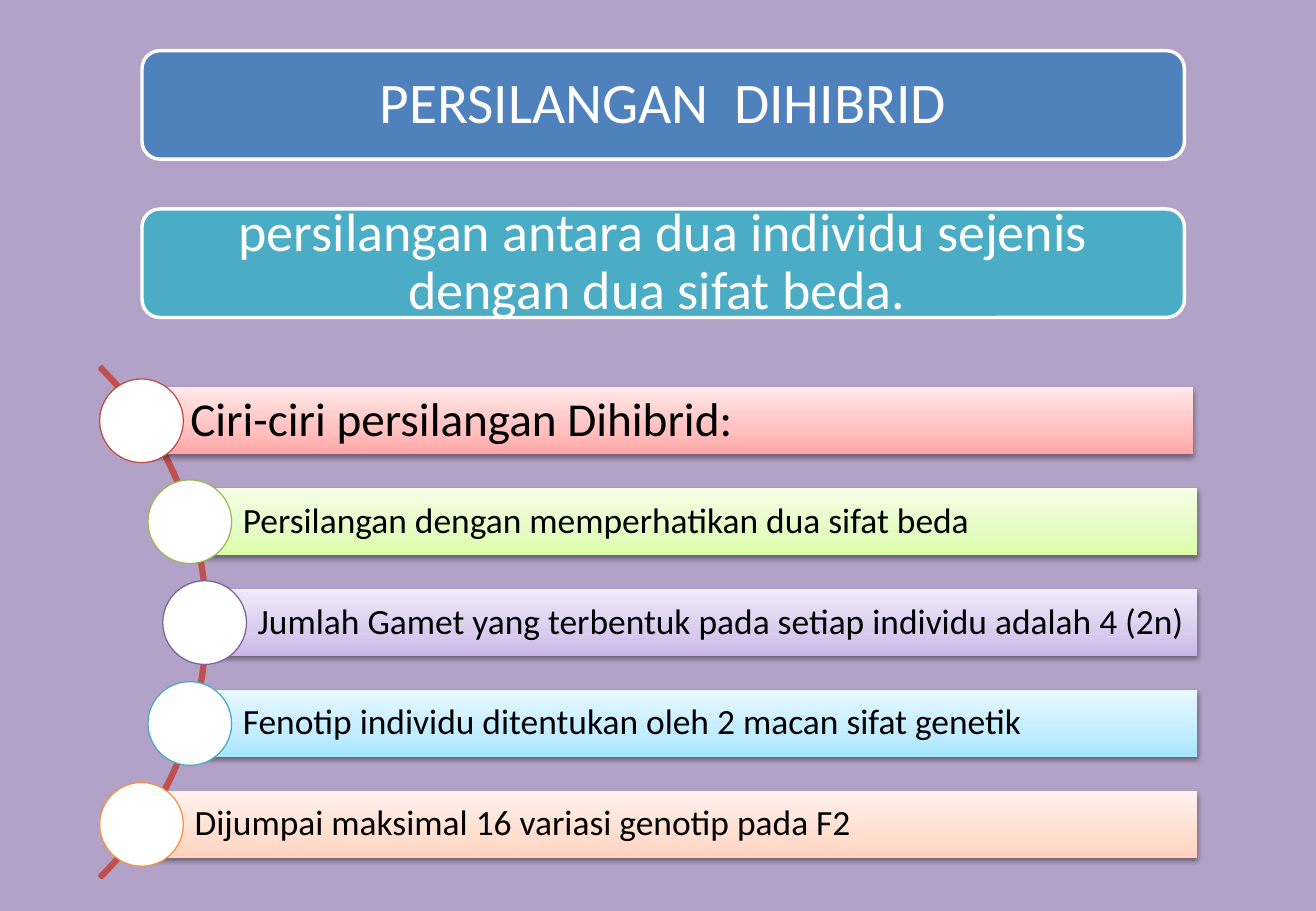
from copy import deepcopy
from dataclasses import dataclass

from pptx import Presentation
from pptx.dml.color import RGBColor as Rgb
from pptx.enum.shapes import MSO_SHAPE as Kind
from pptx.enum.text import MSO_ANCHOR as Anchor, MSO_AUTO_SIZE as Fit, PP_ALIGN as Align
from pptx.oxml import parse_xml
from pptx.oxml.ns import nsdecls, qn
from pptx.util import Cm, Pt


@dataclass(frozen=True)
class Theme:
    font: str = "Calibri"
    back: str = "B3A2C7"
    white: str = "FFFFFF"
    black: str = "000000"
    blue: str = "4F81BD"
    teal: str = "4BACC6"
    red: str = "C0504D"
    title: int = 34
    lead: int = 32
    head: int = 28
    item: int = 21
    # ring line, then gradient from bottom to top
    rows: tuple = (
        ("BF4C48", "FFA6A5", "FFC0BF", "FFE7E7"),
        ("98B955", "DAFDA7", "E4FCC2", "F5FFE7"),
        ("7D60A0", "C9B5E8", "D8CBEE", "F0EAF9"),
        ("46AAC5", "A7E6FF", "C1EDFF", "E7F8FF"),
        ("F69240", "FFD2BD", "FFDED0", "FFF2ED"),
    )


theme = Theme()


def draw(kind, box, fill, line, width):
    """Add a preset shape, box in cm; None leaves out fill or line."""
    shape = slide.shapes.add_shape(kind, *map(Cm, box))
    shape.shadow.inherit = False
    if fill:
        shape.fill.solid()
        shape.fill.fore_color.rgb = Rgb.from_string(fill)
    else:
        shape.fill.background()
    if line:
        shape.line.color.rgb = Rgb.from_string(line)
        shape.line.width = Pt(width)
    else:
        shape.line.fill.background()
    return shape


def write(shape, text, size, color, align, inset, left):
    frame = shape.text_frame
    frame.text = text
    frame.word_wrap = True
    frame.auto_size = Fit.NONE
    frame.vertical_anchor = Anchor.MIDDLE
    frame.margin_left = Cm(left)
    frame.margin_top = frame.margin_right = frame.margin_bottom = Cm(inset)
    para = frame.paragraphs[0]
    para.alignment = align
    para.line_spacing = 0.9
    font = para.runs[0].font
    font.name = theme.font
    font.size = Pt(size)
    font.color.rgb = Rgb.from_string(color)


deck = Presentation()
deck.slide_width, deck.slide_height = Cm(27.52), Cm(19.05)
slide = deck.slides.add_slide(deck.slide_layouts[5])
slide.background.fill.solid()
slide.background.fill.fore_color.rgb = Rgb.from_string(theme.back)

# Two banners; the title lies on the upper one
lead = draw(Kind.ROUNDED_RECTANGLE, (2.97, 4.37, 21.8, 2.27), theme.teal, theme.white, 2)
write(lead, "persilangan antara dua individu sejenis dengan dua sifat beda. ",
      theme.lead, theme.white, Align.CENTER, 0.33, 0.33)
draw(Kind.ROUNDED_RECTANGLE, (2.97, 1.06, 21.8, 2.27), theme.blue, theme.white, 2)

title = slide.shapes.title
title.left, title.top, title.width, title.height = map(Cm, (3.07, 1.17, 21.59, 2.05))
write(title, "PERSILANGAN  DIHIBRID", theme.title, theme.white, Align.CENTER, 0.36, 0.36)
slide.shapes.element.append(title.element)

# Arc behind the rows
arc = draw(Kind.BLOCK_ARC, (-10.77, 5.46, 15.11, 15.11), None, theme.red, 2)
for i, value in enumerate((189, 27, 0.004)):
    arc.adjustments[i] = value

# Rows: a bar that starts at the centre of its ring
first, pitch, tall, ring, right = 8.8, 2.11, 1.4, 1.75, 25.04
rows = (
    ("Ciri-ciri persilangan Dihibrid:", 2.96, theme.head, 0.2, -0.09),
    ("Persilangan dengan memperhatikan dua sifat beda", 3.97, theme.item, 0.15, 0),
    ("Jumlah Gamet yang terbentuk pada setiap individu adalah 4 (2n)",
     4.28, theme.item, 0.15, 0),
    ("Fenotip individu ditentukan oleh 2 macan sifat genetik", 3.97, theme.item, 0.15, 0),
    ("Dijumpai maksimal 16 variasi genotip pada F2", 2.96, theme.item, 0.15, 0),
)
for i, (text, mid, size, inset, shift) in enumerate(rows):
    line, *tones = theme.rows[i]
    y = first + i * pitch
    bar = draw(Kind.RECTANGLE, (mid + shift, y - tall / 2, right - mid, tall),
               None, None, 0)
    bar.fill.gradient()
    bar.fill.gradient_angle = 90
    stops = bar.element.find(".//" + qn("a:gsLst"))
    stops.append(deepcopy(stops[0]))
    for stop, tone, place in zip(bar.fill.gradient_stops, tones, (0, 0.35, 1)):
        stop.color.rgb = Rgb.from_string(tone)
        stop.position = place
    bar.element.find(".//" + qn("a:effectLst")).append(parse_xml(
        f'<a:outerShdw {nsdecls("a")} blurRad="40000" dist="20000" dir="5400000"'
        f' rotWithShape="0"><a:srgbClr val="{theme.black}"><a:alpha val="38000"/>'
        '</a:srgbClr></a:outerShdw>'))
    write(bar, text, size, theme.black, Align.LEFT, inset, 1.11)
    draw(Kind.OVAL, (mid - ring / 2, y - ring / 2, ring, ring), theme.white, line, 0.75)

deck.save("out.pptx")
